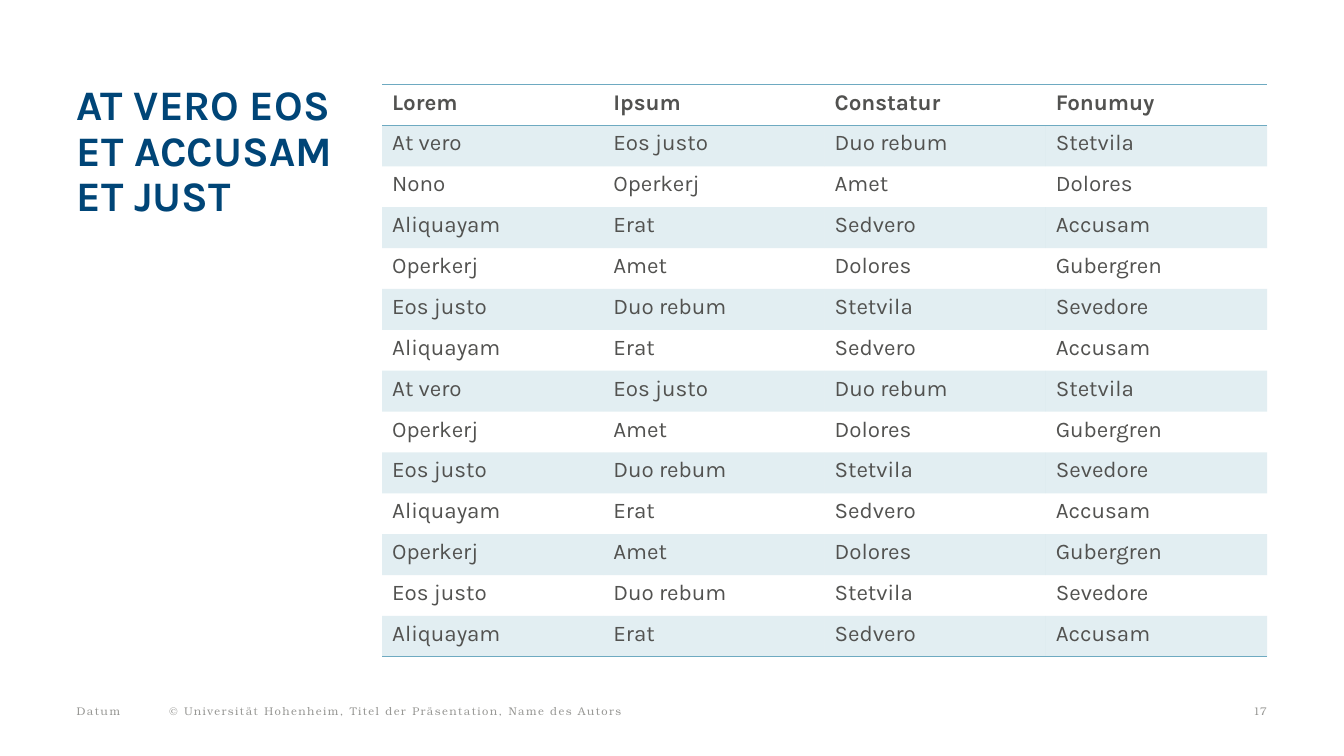
from dataclasses import dataclass

from lxml import etree
from pptx import Presentation
from pptx.dml.color import RGBColor
from pptx.enum.text import PP_ALIGN
from pptx.oxml.ns import qn
from pptx.slide import Slide
from pptx.table import _Cell
from pptx.util import Cm, Pt

LEFT, RIGHT = PP_ALIGN.LEFT, PP_ALIGN.RIGHT

NAVY = RGBColor(0x00, 0x45, 0x77)
TEAL = RGBColor(0x6E, 0xAA, 0xC1)
DARK_GREY = RGBColor(0x52, 0x52, 0x50)
LIGHT_GREY = RGBColor(0x98, 0x98, 0x95)

SANS, SERIF = "Karla", "TeX Gyre Bonum"
NO_STYLE_NO_GRID = "{2D5ABB26-0587-4C30-8999-92F81FD0307C}"
BAND_OPACITY = 20

# Table geometry in centimetres
TABLE_LEFT, TABLE_TOP, TABLE_WIDTH = 9.63, 2.13, 22.3
ROW_HEIGHT = 1.03

HEADER = ("Lorem", "Ipsum", "Constatur", "Fonumuy")
AT_VERO = ("At vero", "Eos justo", "Duo rebum", "Stetvila")
NONO = ("Nono", "Operkerj", "Amet", "Dolores")
ALIQUAYAM = ("Aliquayam", "Erat", "Sedvero", "Accusam")
OPERKERJ = ("Operkerj", "Amet", "Dolores", "Gubergren")
EOS_JUSTO = ("Eos justo", "Duo rebum", "Stetvila", "Sevedore")
ROWS = (
    HEADER, AT_VERO, NONO, ALIQUAYAM, OPERKERJ, EOS_JUSTO, ALIQUAYAM,
    AT_VERO, OPERKERJ, EOS_JUSTO, ALIQUAYAM, OPERKERJ, EOS_JUSTO, ALIQUAYAM,
)


@dataclass(frozen=True)
class Label:
    """A text box; lengths in centimetres, sizes and tracking in points."""
    text: str
    left: float
    top: float
    width: float
    height: float
    size: float = 8
    font: str = SERIF
    color: RGBColor = LIGHT_GREY
    bold: bool = False
    align: PP_ALIGN = LEFT
    line_spacing: float = 1.0
    tracking: float = 0


FOOTER_TOP, FOOTER_HEIGHT = 17.75, 0.33
LABELS = (
    Label("© Universität Hohenheim, Titel der Präsentation, Name des Autors",
          4.27, FOOTER_TOP, 25.04, FOOTER_HEIGHT, tracking=1),
    Label("Datum", 1.93, FOOTER_TOP, 2.03, FOOTER_HEIGHT, tracking=1),
    Label("AT VERO EOS ET ACCUSAM ET JUST", 1.93, 2.13, 7.11, 14.6, size=30,
          font=SANS, color=NAVY, bold=True, line_spacing=0.9),
    Label("17", 29.59, FOOTER_TOP, 2.34, FOOTER_HEIGHT, align=RIGHT),
)


def add_label(slide: Slide, label: Label) -> None:
    box = slide.shapes.add_textbox(
        Cm(label.left), Cm(label.top), Cm(label.width), Cm(label.height))
    frame = box.text_frame
    frame.word_wrap = True
    frame.margin_left = frame.margin_right = 0
    frame.margin_top = frame.margin_bottom = 0
    frame.text = label.text
    paragraph = frame.paragraphs[0]
    paragraph.alignment = label.align
    paragraph.line_spacing = label.line_spacing
    run = paragraph.runs[0]
    run.font.name = label.font
    run.font.size = Pt(label.size)
    run.font.bold = label.bold
    run.font.color.rgb = label.color
    if label.tracking:
        run.font._element.set("spc", str(int(label.tracking * 100)))


def add_border(cell: _Cell, side: str) -> None:
    """Draw a thin teal line; side is lnT or lnB."""
    properties = cell._tc.get_or_add_tcPr()
    line = etree.SubElement(properties, qn(f"a:{side}"), w=str(Pt(1)))
    fill = etree.SubElement(line, qn("a:solidFill"))
    etree.SubElement(fill, qn("a:srgbClr"), val=str(TEAL))


def fill_band(cell: _Cell) -> None:
    cell.fill.solid()
    cell.fill.fore_color.rgb = TEAL
    color = cell._tc.tcPr.find(qn("a:solidFill")).find(qn("a:srgbClr"))
    etree.SubElement(color, qn("a:alpha"), val=str(BAND_OPACITY * 1000))


def format_cell(cell: _Cell, text: str, row_index: int) -> None:
    is_header = row_index == 0
    cell.text_frame.text = text
    font = cell.text_frame.paragraphs[0].runs[0].font
    font.name = SANS
    font.size = Pt(16)
    font.bold = is_header
    font.color.rgb = DARK_GREY
    # Borders come before the fill in the cell properties
    if is_header:
        add_border(cell, "lnT")
    if is_header or row_index == len(ROWS) - 1:
        add_border(cell, "lnB")
    if row_index % 2:
        fill_band(cell)
    else:
        cell.fill.background()


def add_data_table(slide: Slide) -> None:
    frame = slide.shapes.add_table(
        len(ROWS), len(HEADER), Cm(TABLE_LEFT), Cm(TABLE_TOP),
        Cm(TABLE_WIDTH), Cm(ROW_HEIGHT * len(ROWS)))
    table = frame.table
    table.horz_banding = False
    table._tbl.tblPr.find(qn("a:tableStyleId")).text = NO_STYLE_NO_GRID
    for column in table.columns:
        column.width = Cm(TABLE_WIDTH / len(HEADER))
    for row_index, texts in enumerate(ROWS):
        table.rows[row_index].height = Cm(ROW_HEIGHT)
        for column_index, text in enumerate(texts):
            format_cell(table.cell(row_index, column_index), text, row_index)


def main() -> None:
    presentation = Presentation()
    presentation.slide_width = Cm(33.87)
    presentation.slide_height = Cm(19.05)
    slide = presentation.slides.add_slide(presentation.slide_layouts[6])

    # Title, footer and page number
    for label in LABELS:
        add_label(slide, label)

    # Banded table
    add_data_table(slide)

    presentation.save("out.pptx")


if __name__ == "__main__":
    main()
